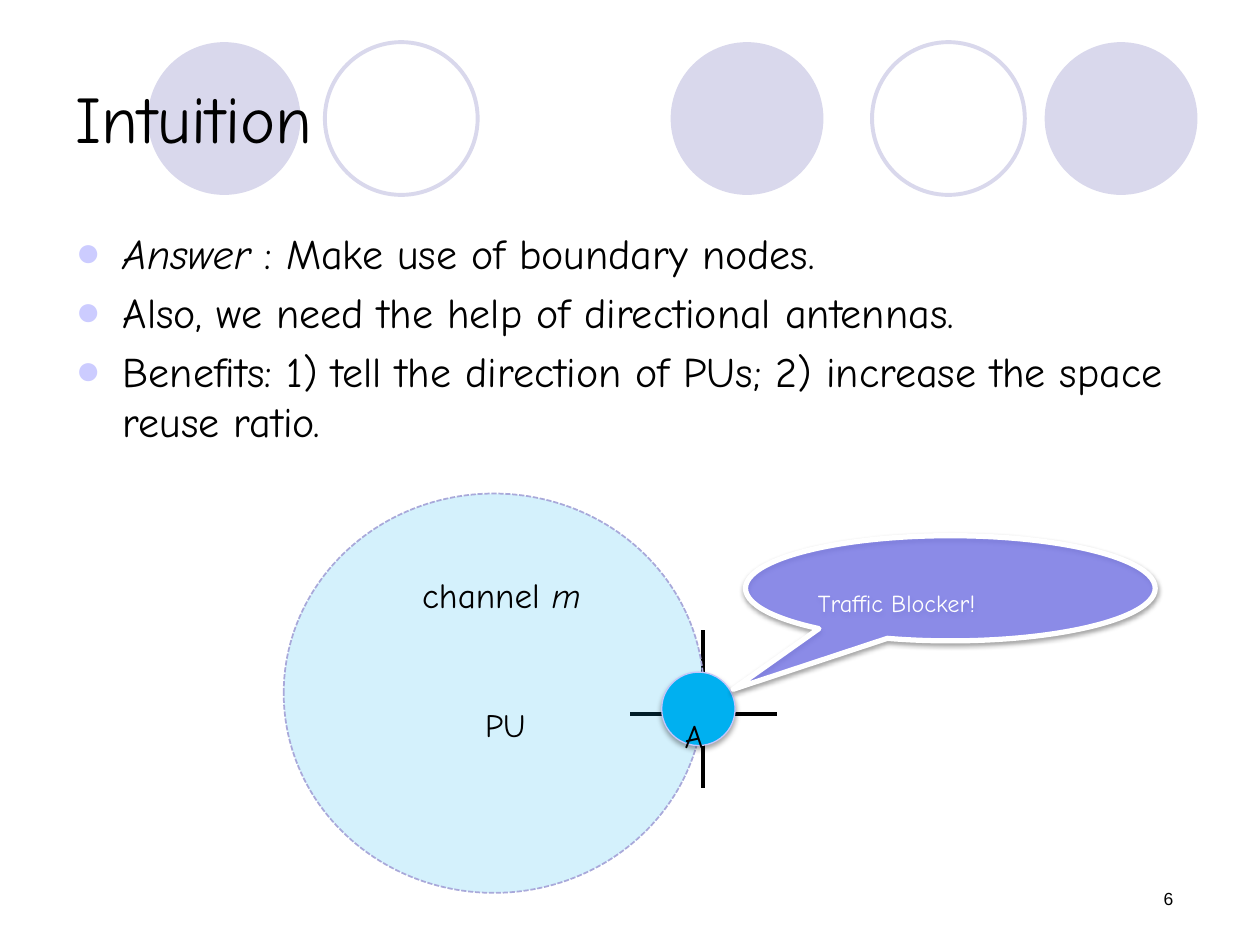
from dataclasses import dataclass

from lxml import etree
from pptx import Presentation
from pptx.dml.color import RGBColor
from pptx.enum.dml import MSO_LINE
from pptx.enum.shapes import MSO_CONNECTOR, MSO_SHAPE
from pptx.enum.text import MSO_ANCHOR, MSO_AUTO_SIZE, PP_ALIGN
from pptx.oxml.ns import qn
from pptx.util import Cm, Pt

ELLIPSE = MSO_SHAPE.OVAL
CALLOUT = MSO_SHAPE.OVAL_CALLOUT
STRAIGHT = MSO_CONNECTOR.STRAIGHT
DASHED = MSO_LINE.SQUARE_DOT
LEFT, RIGHT = PP_ALIGN.LEFT, PP_ALIGN.RIGHT
TOP, MIDDLE = MSO_ANCHOR.TOP, MSO_ANCHOR.MIDDLE


@dataclass(frozen=True)
class Theme:
    font: str = "Comic Neue"
    number_font: str = "Arial"
    ink: str = "000000"
    white: str = "FFFFFF"
    ornament: str = "D9D8EC"
    bullet: str = "CCCCFF"
    node: str = "00B0F0"
    node_edge: str = "C6C6FB"
    range_edge: str = "A9A9DA"
    callout: str = "6A6AFF"
    title_size: int = 38
    body_size: int = 24
    label_size: int = 20
    lowered_size: int = 32
    number_size: int = 10


class SlideBuilder:
    def __init__(self, slide, theme):
        self.slide = slide
        self.theme = theme

    def style_paragraph(self, paragraph, size, color=None, font=None, align=LEFT):
        paragraph.alignment = align
        paragraph.font.size = Pt(size)
        paragraph.font.name = font or self.theme.font
        paragraph.font.color.rgb = RGBColor.from_string(color or self.theme.ink)

    def add_runs(self, paragraph, parts, lowered=False):
        """Each part is a (text, italic) pair."""
        for text, italic in parts:
            run = paragraph.add_run()
            run.text = text
            if italic:
                run.font.italic = True
            if lowered:
                run._r.get_or_add_rPr().set("baseline", "-25000")

    def place(self, placeholder, left, top, width, height, anchor):
        """Move a placeholder and bring it in front of what is drawn so far."""
        placeholder.left, placeholder.top = Cm(left), Cm(top)
        placeholder.width, placeholder.height = Cm(width), Cm(height)
        placeholder.text_frame.vertical_anchor = anchor
        placeholder.text_frame.auto_size = MSO_AUTO_SIZE.NONE
        self.slide.shapes._spTree.append(placeholder._element)
        return placeholder.text_frame

    def title(self, text, *box):
        frame = self.place(self.slide.shapes.title, *box, MIDDLE)
        frame.text = text
        self.style_paragraph(frame.paragraphs[0], self.theme.title_size)

    def bullets(self, items, *box):
        frame = self.place(self.slide.placeholders[1], *box, TOP)
        for index, parts in enumerate(items):
            paragraph = frame.add_paragraph() if index else frame.paragraphs[0]
            self.style_paragraph(paragraph, self.theme.body_size)
            paragraph.space_before = Pt(5)
            self.add_runs(paragraph, parts)
            properties = paragraph._p.get_or_add_pPr()
            properties.set("marL", str(Cm(0.95)))
            properties.set("indent", str(-Cm(0.95)))
            bullet_color = etree.Element(qn("a:buClr"))
            etree.SubElement(bullet_color, qn("a:srgbClr"), val=self.theme.bullet)
            bullet = etree.Element(qn("a:buChar"), char="●")
            # Bullet settings stand after the spacing, before the run defaults
            defaults = properties.find(qn("a:defRPr"))
            for element in (bullet_color, bullet):
                if defaults is None:
                    properties.append(element)
                else:
                    defaults.addprevious(element)

    def label(self, parts, left, top, width, height, size, lowered=False, **style):
        box = self.slide.shapes.add_textbox(Cm(left), Cm(top), Cm(width), Cm(height))
        box.text_frame.word_wrap = True
        paragraph = box.text_frame.paragraphs[0]
        self.style_paragraph(paragraph, size, **style)
        self.add_runs(paragraph, parts, lowered)

    def shape(self, kind, left, top, width, height, fill=None, opacity=100,
              line=None, line_width=1, dash=None):
        shape = self.slide.shapes.add_shape(
            kind, Cm(left), Cm(top), Cm(width), Cm(height))
        shape.shadow.inherit = False
        if fill:
            shape.fill.solid()
            shape.fill.fore_color.rgb = RGBColor.from_string(fill)
            if opacity < 100:
                color = shape._element.spPr.find(qn("a:solidFill"))[0]
                etree.SubElement(color, qn("a:alpha"), val=str(opacity * 1000))
        else:
            shape.fill.background()
        if line:
            shape.line.color.rgb = RGBColor.from_string(line)
            shape.line.width = Pt(line_width)
            if dash:
                shape.line.dash_style = dash
        else:
            shape.line.fill.background()
        return shape

    def drop_shadow(self, shape, opacity, distance):
        effects = shape._element.spPr.find(qn("a:effectLst"))
        shadow = etree.SubElement(
            effects, qn("a:outerShdw"), blurRad=str(Pt(3.1)),
            dist=str(Pt(distance)), dir="5400000", rotWithShape="0")
        color = etree.SubElement(shadow, qn("a:srgbClr"), val=self.theme.ink)
        etree.SubElement(color, qn("a:alpha"), val=str(opacity * 1000))

    def line(self, x1, y1, x2, y2):
        connector = self.slide.shapes.add_connector(
            STRAIGHT, Cm(x1), Cm(y1), Cm(x2), Cm(y2))
        connector.line.color.rgb = RGBColor.from_string(self.theme.ink)
        connector.line.width = Pt(2.25)
        etree.SubElement(connector._element.spPr, qn("a:effectLst"))

    def callout(self, text, *box):
        shape = self.shape(CALLOUT, *box, fill=self.theme.callout, opacity=62,
                           line=self.theme.white, line_width=3)
        shape.adjustments[0], shape.adjustments[1] = -0.53, 0.96
        self.drop_shadow(shape, 38, 1.6)
        shape.text_frame.vertical_anchor = MIDDLE
        paragraph = shape.text_frame.paragraphs[0]
        self.style_paragraph(paragraph, self.theme.body_size, self.theme.white)
        self.add_runs(paragraph, [(text, False)], lowered=True)


def main():
    presentation = Presentation()
    presentation.slide_width, presentation.slide_height = Cm(25.4), Cm(19.05)
    slide = presentation.slides.add_slide(presentation.slide_layouts[1])
    theme = Theme()
    builder = SlideBuilder(slide, theme)

    # Row of ornamental circles
    for left in (2.98, 13.52, 21.06):
        builder.shape(ELLIPSE, left, 0.85, 3.08, 3.08, fill=theme.ornament)
    for left in (6.55, 17.58):
        builder.shape(ELLIPSE, left, 0.85, 3.08, 3.08,
                      line=theme.ornament, line_width=2.25)

    # Antenna cross behind node A
    builder.line(12.7, 14.4, 15.67, 14.4)
    builder.line(14.18, 15.88, 14.18, 12.7)

    # Title and list
    builder.title("Intuition", 1.27, 0.76, 22.86, 3.18)
    builder.bullets([
        [("Answer ", True), (": Make use of boundary nodes.", False)],
        [("Also, we need the help of directional antennas.", False)],
        [("Benefits: 1) tell the direction of PUs; "
          "2) increase the space reuse ratio.", False)],
    ], 1.27, 4.45, 22.86, 12.57)

    # Slide number
    builder.label([("6", False)], 17.98, 17.78, 5.92, 1.27, theme.number_size,
                  font=theme.number_font, align=RIGHT)

    # Range of the primary user
    builder.shape(ELLIPSE, 5.72, 9.95, 8.47, 8.05, fill=theme.node, opacity=17,
                  line=theme.range_edge, dash=DASHED)
    builder.label([("PU", False)], 9.53, 13.34, 1.69, 1.27,
                  theme.lowered_size, lowered=True)
    builder.label([("channel ", False), ("m", True)], 8.26, 11.43, 4.87, 1.06,
                  theme.label_size)

    # Boundary node and its callout
    node = builder.shape(ELLIPSE, 13.34, 13.55, 1.48, 1.48, fill=theme.node,
                         line=theme.node_edge, line_width=0.75)
    builder.drop_shadow(node, 35, 1.8)
    builder.label([("A", False)], 13.55, 13.55, 1.06, 1.06,
                  theme.lowered_size, lowered=True)
    builder.callout("Traffic Blocker!", 15.03, 10.8, 8.26, 2.12)

    presentation.save("out.pptx")


if __name__ == "__main__":
    main()
